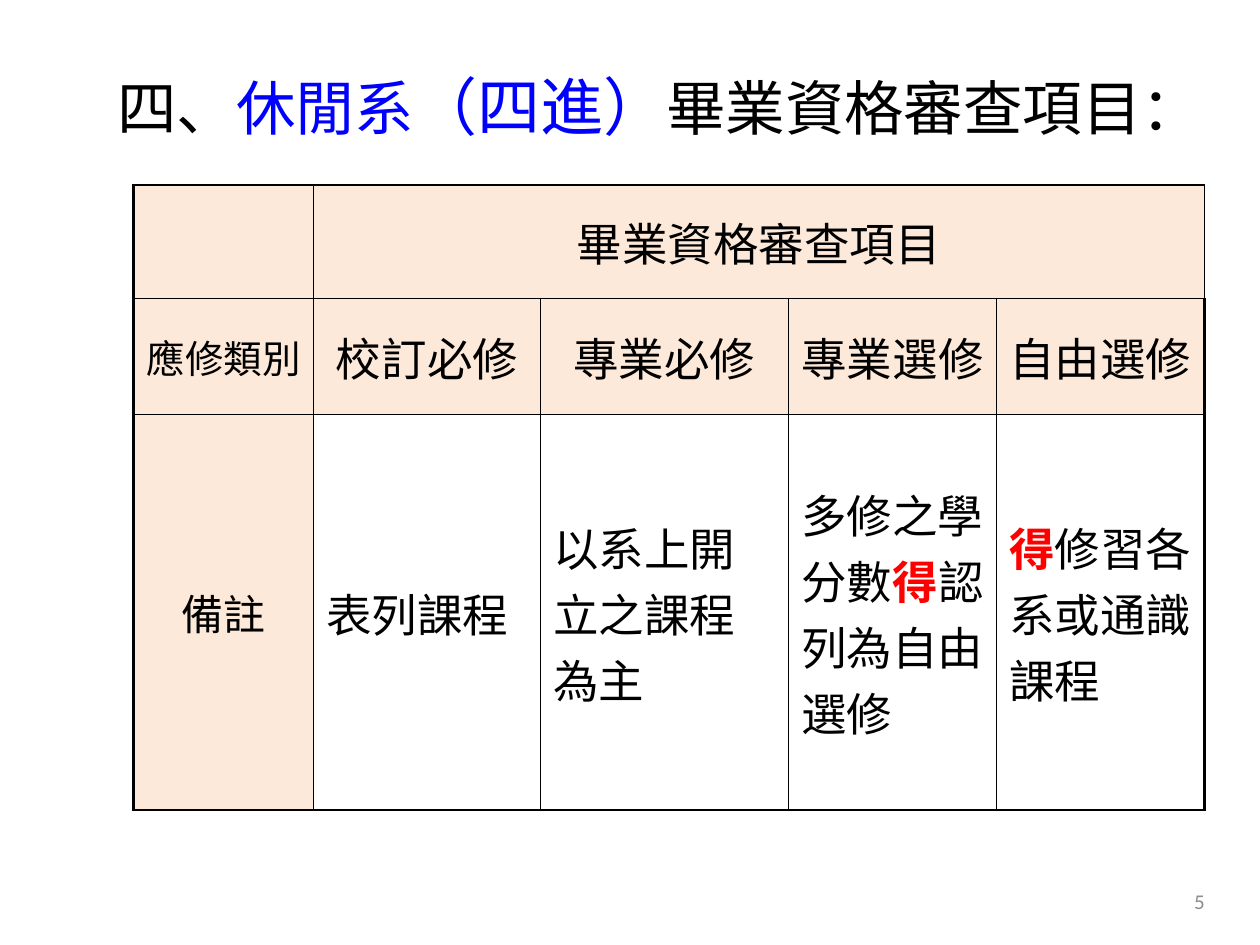
from dataclasses import dataclass

from lxml.etree import SubElement
from pptx import Presentation
from pptx.dml.color import RGBColor as RGB
from pptx.enum.text import MSO_ANCHOR as ANCHOR, MSO_AUTO_SIZE as FIT, PP_ALIGN as ALIGN
from pptx.oxml.ns import qn
from pptx.util import Inches, Pt


@dataclass(frozen=True)
class Theme:
    black: RGB = RGB(0, 0, 0)
    blue: RGB = RGB(0, 0, 255)
    red: RGB = RGB(255, 0, 0)
    gray: RGB = RGB(0x8C, 0x8C, 0x8C)
    peach: RGB = RGB(0xFD, 0xE9, 0xD9)
    cjk: str = "Noto Sans CJK JP"
    serif: str = "Times New Roman"
    sans: str = "Calibri"
    title: int = 34
    title_large: int = 36
    body: int = 26
    note: int = 24
    label: int = 22
    number: int = 12
    outer: float = 1.5
    inner: float = 1


T = Theme()


def add_run(p, text, size, color=T.black, name=T.serif, bold=False):
    r = p.add_run()
    r.text = text
    for key, value in {"size": Pt(size), "name": name, "bold": bold}.items():
        setattr(r.font, key, value)
    r.font.color.rgb = color
    SubElement(r.font._element, qn("a:ea")).set("typeface", T.cjk)


def set_borders(cell, widths):
    """Draw left, right, top and bottom lines, given in points."""
    tc_pr = cell._tc.get_or_add_tcPr()
    for i, (side, width) in enumerate(zip("LRTB", widths)):
        ln = SubElement(tc_pr, qn(f"a:ln{side}"), w=str(Pt(width)))
        tc_pr.insert(i, ln)
        fill = SubElement(ln, qn("a:solidFill"))
        SubElement(fill, qn("a:srgbClr"), val=str(T.black))


def place(sp, box):
    for key, value in zip(("left", "top", "width", "height"), box):
        setattr(sp, key, Inches(value))


def add_title(slide, box):
    sp = slide.shapes.title
    place(sp, box)
    tf = sp.text_frame
    settings = {"auto_size": FIT.NONE, "word_wrap": True,
                "vertical_anchor": ANCHOR.MIDDLE, "margin_right": 0}
    for key, value in settings.items():
        setattr(tf, key, value)
    p = tf.paragraphs[0]
    p.alignment = ALIGN.LEFT
    for text, size, color in (
        ("四、", T.title, T.black),
        ("休閒系", T.title, T.blue),
        ("（四進）", T.title_large, T.blue),
        ("畢業資格審查項目：", T.title, T.black),
    ):
        add_run(p, text, size, color, T.cjk)


def add_review_table(slide, box, col_widths, row_heights):
    # Each cell is a list of text pieces; "得" is the emphasised word
    rows = (
        ([], ["畢業資格審查項目"], [], [], []),
        (["應修類別"], ["校訂必修"], ["專業必修"], ["專業選修"], ["自由選修"]),
        (["備註"], ["表列課程"], ["以系上開立之課程為主"],
         ["多修之學分數", "得", "認列為自由選修"], ["得", "修習各系或通識課程"]),
    )
    sizes = {(1, 0): T.label, (2, 0): T.note}
    last_row, last_col = len(row_heights) - 1, len(col_widths) - 1
    table = slide.shapes.add_table(
        len(row_heights), len(col_widths), *map(Inches, box)).table
    for column, width in zip(table.columns, col_widths):
        column.width = Inches(width)
    for row, height in zip(table.rows, row_heights):
        row.height = Inches(height)
    table.cell(0, 1).merge(table.cell(0, last_col))

    for i, row in enumerate(rows):
        for j, pieces in enumerate(row):
            cell = table.cell(i, j)
            heading = i < last_row or j == 0
            cell.vertical_anchor = ANCHOR.MIDDLE
            if heading:
                cell.fill.solid()
                cell.fill.fore_color.rgb = T.peach
            else:
                cell.fill.background()
            edges = (j == 0, j == last_col, i == 0, i == last_row)
            set_borders(cell, [T.outer if edge else T.inner for edge in edges])
            p = cell.text_frame.paragraphs[0]
            p.alignment = ALIGN.CENTER if heading else ALIGN.LEFT
            for text in pieces:
                strong = text == "得"
                add_run(p, text, sizes.get((i, j), T.body),
                        T.red if strong else T.black, bold=strong)


def add_slide_number(slide, box, number):
    tf = slide.shapes.add_textbox(*map(Inches, box)).text_frame
    tf.word_wrap = True
    tf.vertical_anchor = ANCHOR.MIDDLE
    p = tf.paragraphs[0]
    p.alignment = ALIGN.RIGHT
    add_run(p, number, T.number, T.gray, T.sans)


def main():
    prs = Presentation()
    prs.slide_width, prs.slide_height = Inches(10), Inches(7.5)
    slide = prs.slides.add_slide(prs.slide_layouts[5])
    add_slide_number(slide, (7.33, 6.95, 2.33, 0.4), "5")
    add_review_table(slide, (1.06, 1.47, 8.5, 4.96),
                     (1.43, 1.8, 1.97, 1.65, 1.65), (0.9, 0.92, 3.14))
    add_title(slide, (0.83, 0.29, 8.83, 1.09))
    prs.save("out.pptx")


if __name__ == "__main__":
    main()
